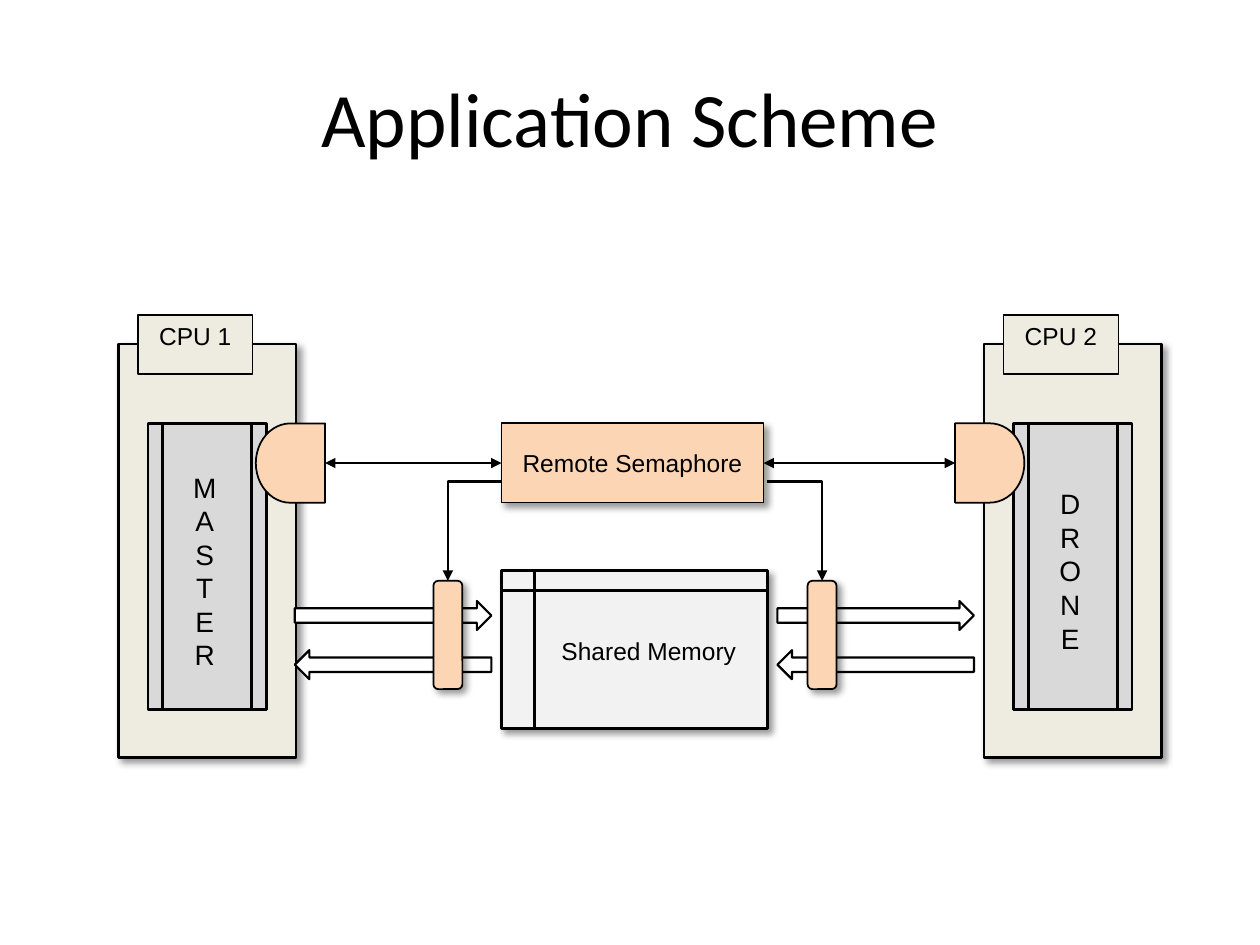
from lxml.etree import SubElement
from pptx import Presentation
from pptx.dml.color import RGBColor
from pptx.enum.shapes import MSO_CONNECTOR as CONN, MSO_SHAPE as SHAPE
from pptx.enum.text import MSO_ANCHOR as ANCHOR, PP_ALIGN as ALIGN
from pptx.oxml.ns import qn
from pptx.util import Inches, Pt

BLACK = RGBColor(0x00, 0x00, 0x00)
WHITE = RGBColor(0xFF, 0xFF, 0xFF)
BEIGE = RGBColor(0xEE, 0xEC, 0xE1)
GREY = RGBColor(0xD9, 0xD9, 0xD9)
PALE = RGBColor(0xF2, 0xF2, 0xF2)
PEACH = RGBColor(0xFC, 0xD5, 0xB5)

TITLE = "Application Scheme"
CPUS = [(0.94, "CPU 1", "MASTER"), (7.81, "CPU 2", "DRONE")]
ARROW_LEFTS = (2.34, 6.17)
ARROW_ROWS = [(4.77, 0), (5.16, 180)]  # top, rotation
SEMAPHORE = (3.98, 3.36, 2.08, 0.63)
PORTS = [(2.03, 180), (7.58, 0)]  # left, rotation
PORT_W = 0.55
GATES = [(3.98, 3.44), (6.09, 6.41)]  # start of signal, left of gate
GATE_TOP, GATE_W, GATE_H = 4.61, 0.23, 0.86
SIGNAL_Y = 3.82


def write(shape, text, size, anchor=ANCHOR.TOP, margin=0.1):
    tf = shape.text_frame
    tf.word_wrap = True
    tf.vertical_anchor = anchor
    tf.margin_left = tf.margin_right = Inches(margin)
    p = tf.paragraphs[0]
    p.alignment = ALIGN.CENTER
    r = p.add_run()
    r.text = text
    r.font.size = Pt(size)
    r.font.name = "Arial"
    r.font.color.rgb = BLACK


def add_shape(s, kind, box, fill, width, rotation=0, shadow=False):
    sp = s.shapes.add_shape(kind, *map(Inches, box))
    sp.rotation = rotation
    sp.fill.solid()
    sp.fill.fore_color.rgb = fill
    sp.line.color.rgb = BLACK
    sp.line.width = Pt(width)
    sp.shadow.inherit = False
    if shadow:
        effects = sp._element.spPr.find(qn("a:effectLst"))
        outer = SubElement(effects, qn("a:outerShdw"), blurRad=str(Pt(4)), dist=str(Pt(3)),
                           dir="2700000", algn="tl", rotWithShape="0")
        color = SubElement(outer, qn("a:srgbClr"), val=str(BLACK))
        SubElement(color, qn("a:alpha"), val="40000")
    return sp


def add_text(s, box, text, size, **layout):
    write(s.shapes.add_textbox(*map(Inches, box)), text, size, **layout)


def add_arrow(s, kind, start, end, both_ends=False):
    c = s.shapes.add_connector(kind, *map(Inches, start + end))
    c.line.color.rgb = BLACK
    c.line.width = Pt(1.5)
    ln = c.line._get_or_add_ln()
    for tag in ("a:headEnd", "a:tailEnd") if both_ends else ("a:tailEnd",):
        SubElement(ln, qn(tag), type="triangle")
    SubElement(c._element.spPr, qn("a:effectLst"))
    return c


def add_cpu(s, left, label, role):
    add_shape(s, SHAPE.RECTANGLE, (left, 2.73, 1.41, 3.28), BEIGE, 1.5, shadow=True)
    tab = add_shape(s, SHAPE.RECTANGLE, (left + 0.155, 2.5, 0.91, 0.47), BEIGE, 0.75)
    write(tab, label, 14)
    add_shape(s, SHAPE.FLOWCHART_PREDEFINED_PROCESS, (left + 0.235, 3.36, 0.94, 2.27), GREY, 1.5)
    # The narrow box stacks the letters one per line
    add_text(s, (left + 0.435, 3.59, 0.5, 1.88), role, 16, anchor=ANCHOR.MIDDLE, margin=0.12)


def add_memory(s):
    add_shape(s, SHAPE.FLOWCHART_INTERNAL_STORAGE, (3.98, 4.53, 2.11, 1.25), PALE, 1.5, shadow=True)
    add_text(s, (4.37, 5, 1.56, 0.34), "Shared Memory", 14, margin=0.04)
    for left in ARROW_LEFTS:
        for top, rotation in ARROW_ROWS:
            add_shape(s, SHAPE.RIGHT_ARROW, (left, top, 1.56, 0.23), WHITE, 1.25, rotation)


def add_semaphore(s):
    left, top, width, height = SEMAPHORE
    middle = top + height / 2
    box = add_shape(s, SHAPE.RECTANGLE, SEMAPHORE, PEACH, 1, shadow=True)
    write(box, "Remote Semaphore", 14, ANCHOR.MIDDLE)
    for x, rotation in PORTS:
        add_shape(s, SHAPE.FLOWCHART_DELAY, (x, top, PORT_W, height), PEACH, 1, rotation)
    (left_port, _), (right_port, _) = PORTS
    to_left = add_arrow(s, CONN.STRAIGHT, (left_port + PORT_W, middle), (left, middle), True)
    to_left.end_connect(box, 1)
    to_right = add_arrow(s, CONN.STRAIGHT, (left + width, middle), (right_port, middle), True)
    to_right.begin_connect(box, 3)


def add_gates(s):
    for start, left in GATES:
        signal = add_arrow(s, CONN.ELBOW, (start, SIGNAL_Y), (left + GATE_W / 2, GATE_TOP))
        # One bend: across, then down
        signal._element.spPr.find(qn("a:prstGeom")).set("prst", "bentConnector2")
        add_shape(s, SHAPE.ROUNDED_RECTANGLE, (left, GATE_TOP, GATE_W, GATE_H), PEACH, 1, shadow=True)


def main():
    prs = Presentation()
    prs.slide_width, prs.slide_height = Inches(10), Inches(7.5)
    s = prs.slides.add_slide(prs.slide_layouts[5])

    title = s.shapes.title
    title.left, title.top, title.width, title.height = map(Inches, (0.5, 0.3, 9, 1.25))
    p = title.text_frame.paragraphs[0]
    p.alignment = ALIGN.CENTER
    r = p.add_run()
    r.text = TITLE
    r.font.size = Pt(44)
    r.font.name = "Calibri"
    r.font.color.rgb = BLACK

    for cpu in CPUS:
        add_cpu(s, *cpu)
    add_memory(s)
    add_semaphore(s)
    add_gates(s)
    prs.save("out.pptx")


if __name__ == "__main__":
    main()
